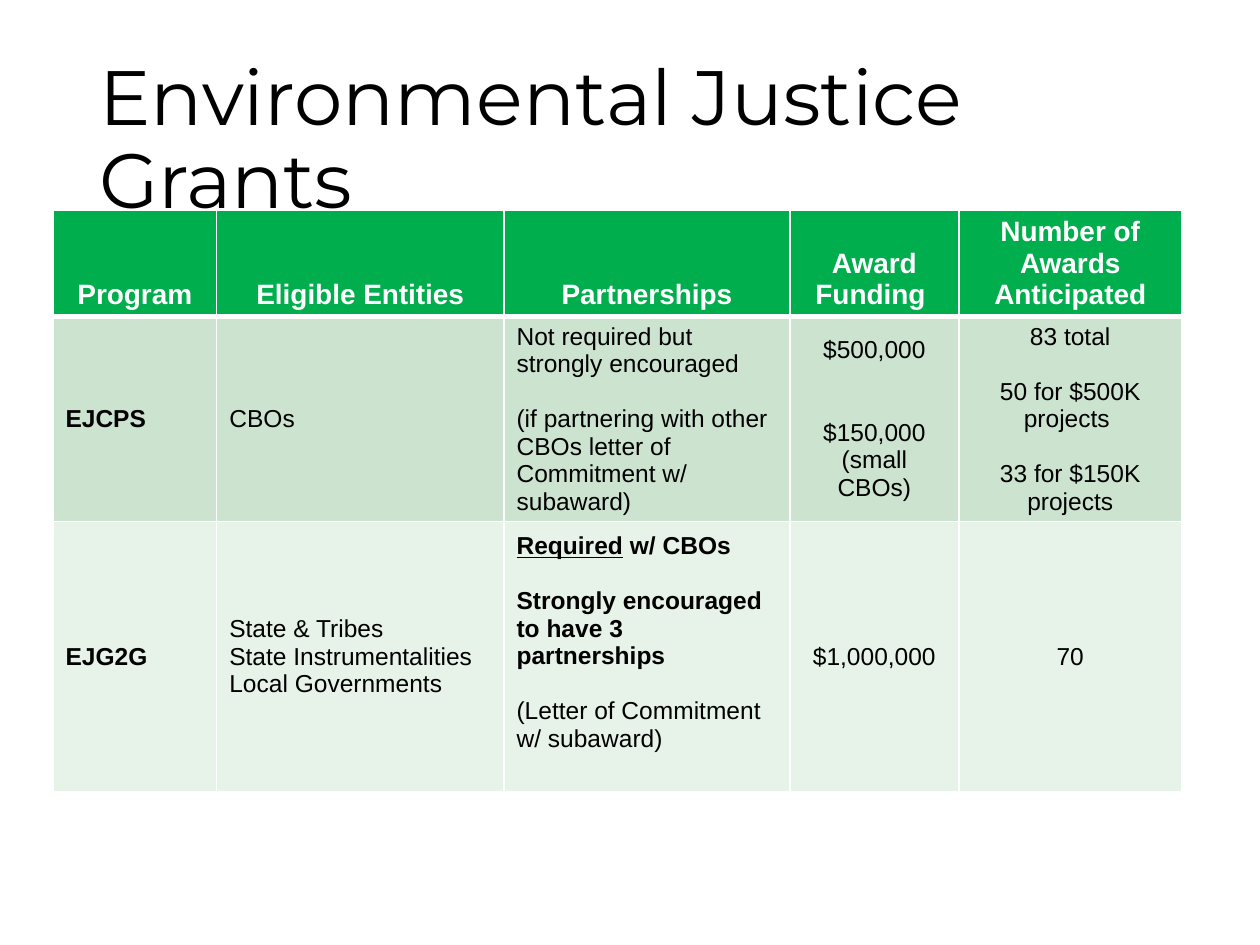
from dataclasses import dataclass

from lxml.etree import SubElement
from pptx import Presentation
from pptx.dml.color import RGBColor
from pptx.enum.text import MSO_ANCHOR, PP_ALIGN
from pptx.oxml.ns import qn
from pptx.util import Inches, Pt


@dataclass(frozen=True)
class Theme:
    title_font: str = "Montserrat"
    body_font: str = "Arial"
    title_size: int = 44
    header_size: int = 16
    body_size: int = 14
    line_height: float = 15.7
    text: str = "000000"
    white: str = "FFFFFF"
    header_fill: str = "00AE4D"
    row_fills: tuple = ("CCE3D0", "E7F2E9")


@dataclass(frozen=True)
class Line:
    """One paragraph of a cell; gap counts the empty lines above it."""
    text: str
    gap: int = 0
    bold: bool = False
    underlined: str = ""


COLUMN_WIDTHS = (1.3, 2.28, 2.27, 1.34, 1.77)
ROW_HEIGHTS = (0.79, 1.58, 2.14)
CENTERED_COLUMNS = (3, 4)
HEADERS = ("Program", "Eligible Entities", "Partnerships", "Award Funding ",
           "Number of Awards Anticipated")
PROGRAMS = (
    (
        [Line("EJCPS", bold=True)],
        [Line("CBOs")],
        [Line("Not required but strongly encouraged"),
         Line("(if partnering with other CBOs letter of Commitment w/ subaward)", gap=1)],
        [Line("$500,000"), Line("$150,000 (small CBOs)", gap=2)],
        [Line("83 total"), Line("50 for $500K projects ", gap=1),
         Line("33 for $150K projects", gap=1)],
    ),
    (
        [Line("EJG2G", bold=True)],
        [Line("State & Tribes"), Line("State Instrumentalities"), Line("Local Governments")],
        [Line(" w/ CBOs", bold=True, underlined="Required"),
         Line("Strongly encouraged to have 3 partnerships", gap=1, bold=True),
         Line("(Letter of Commitment w/ subaward)", gap=1)],
        [Line("$1,000,000")],
        [Line("70")],
    ),
)


class SlideBuilder:
    def __init__(self, page, theme):
        self.page = page
        self.theme = theme

    def style(self, para, font, size, color, bold=False):
        para.font.name = font
        para.font.size = Pt(size)
        para.font.bold = bold
        para.font.color.rgb = RGBColor.from_string(color)

    def title(self, text, left, top, width, height):
        box = self.page.shapes.add_textbox(
            Inches(left), Inches(top), Inches(width), Inches(height))
        frame = box.text_frame
        frame.word_wrap = True
        frame.vertical_anchor = MSO_ANCHOR.MIDDLE
        para = frame.paragraphs[0]
        para.text = text
        para.line_spacing = 0.9
        self.style(para, self.theme.title_font, self.theme.title_size, self.theme.text)

    def table(self, left, top, widths, heights):
        frame = self.page.shapes.add_table(
            len(heights), len(widths), Inches(left), Inches(top),
            Inches(sum(widths)), Inches(sum(heights)))
        table = frame.table
        table.first_row = table.horz_banding = False
        for column, width in zip(table.columns, widths):
            column.width = Inches(width)
        for row, height in zip(table.rows, heights):
            row.height = Inches(height)
        return table

    def borders(self, cell, top=1, bottom=1):
        properties = cell._tc.get_or_add_tcPr()
        for side, points in (("L", 1), ("R", 1), ("T", top), ("B", bottom)):
            line = SubElement(properties, qn(f"a:ln{side}"), w=str(Pt(points)))
            fill = SubElement(line, qn("a:solidFill"))
            SubElement(fill, qn("a:srgbClr"), val=self.theme.white)

    def fill(self, cell, color):
        cell.fill.solid()
        cell.fill.fore_color.rgb = RGBColor.from_string(color)

    def header_cell(self, cell, text):
        theme = self.theme
        self.borders(cell, bottom=3)
        self.fill(cell, theme.header_fill)
        cell.vertical_anchor = MSO_ANCHOR.BOTTOM
        para = cell.text_frame.paragraphs[0]
        para.text = text
        para.alignment = PP_ALIGN.CENTER
        self.style(para, theme.body_font, theme.header_size, theme.white, bold=True)

    def body_cell(self, cell, lines, color, centered, below_header):
        theme = self.theme
        self.borders(cell, top=3 if below_header else 1)
        self.fill(cell, color)
        cell.vertical_anchor = MSO_ANCHOR.MIDDLE
        frame = cell.text_frame
        for index, line in enumerate(lines):
            para = frame.add_paragraph() if index else frame.paragraphs[0]
            para.alignment = PP_ALIGN.CENTER if centered else PP_ALIGN.LEFT
            if line.gap:
                para.space_before = Pt(line.gap * theme.line_height)
            if line.underlined:
                span = para.add_run()
                span.text = line.underlined
                span.font.underline = True
            para.add_run().text = line.text
            self.style(para, theme.body_font, theme.body_size, theme.text, line.bold)


def main():
    deck = Presentation()
    deck.slide_width, deck.slide_height = Inches(10), Inches(7.5)
    theme = Theme()
    builder = SlideBuilder(deck.slides.add_slide(deck.slide_layouts[6]), theme)

    table = builder.table(0.42, 1.67, COLUMN_WIDTHS, ROW_HEIGHTS)
    for column, text in enumerate(HEADERS):
        builder.header_cell(table.cell(0, column), text)
    for row, (program, color) in enumerate(zip(PROGRAMS, theme.row_fills), start=1):
        for column, lines in enumerate(program):
            builder.body_cell(table.cell(row, column), lines, color,
                              column in CENTERED_COLUMNS, row == 1)
    # Lifts the partnership terms of EJG2G one line above the middle.
    table.cell(2, 2).margin_bottom = Inches(0.27)

    builder.title("Environmental Justice Grants", 0.69, 0.4, 8.62, 1.45)
    deck.save("out.pptx")


if __name__ == "__main__":
    main()
